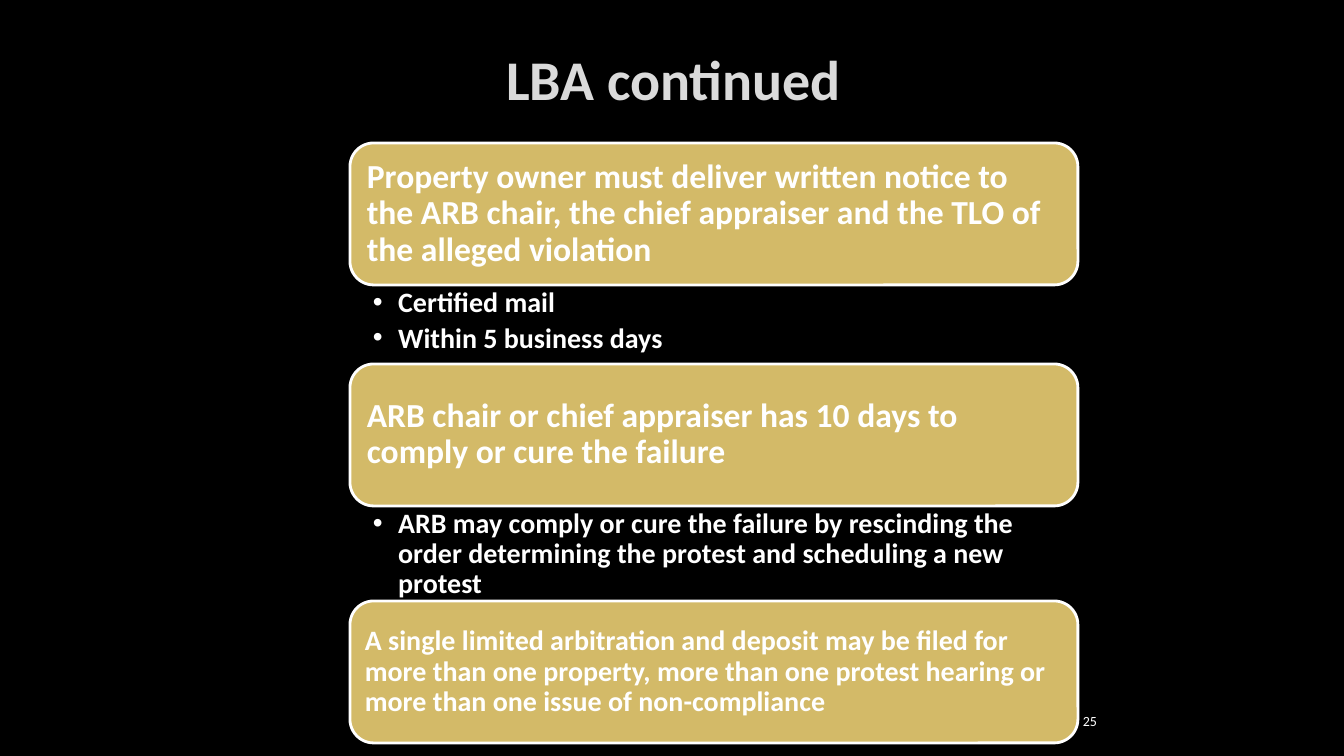
from dataclasses import dataclass

from lxml import etree
from pptx import Presentation, util as u
from pptx.dml.color import RGBColor
from pptx.enum import shapes, text
from pptx.oxml import ns

EMU_PER_PX = 12192000 / 1344
FONT = "Calibri"
COLORS = {
    "background": "000000",
    "title": "DADADA",
    "outline": "404040",
    "box": "D3BA68",
    "text": "FFFFFF",
}
LEFT, TOP, WIDTH, BOX_HEIGHT = 350, 143, 728, 142


@dataclass
class Step:
    heading: str
    size: int
    inset: int
    bullets: tuple[str, ...] = ()
    list_height: int = 0


STEPS = [
    Step(
        "Property owner must deliver written notice to the ARB chair, "
        "the chief appraiser and the TLO of the alleged violation",
        24, 10, ("Certified mail", "Within 5 business days"), 79,
    ),
    Step(
        "ARB chair or chief appraiser has 10 days to comply or cure the failure",
        24, 10,
        ("ARB may comply or cure the failure by rescinding the order "
         "determining the protest and scheduling a new protest",), 95,
    ),
    Step(
        "A single limited arbitration and deposit may be filed for more than one "
        "property, more than one protest hearing or more than one issue of "
        "non-compliance",
        20, 8,
    ),
]


def px(n: int) -> int:
    return u.Emu(round(n * EMU_PER_PX))


def rgb(name: str) -> RGBColor:
    return RGBColor.from_string(COLORS[name])


def place(sp, left: int, top: int, width: int, height: int) -> None:
    sp.left, sp.top, sp.width, sp.height = map(px, (left, top, width, height))


def set_frame(tf, anchor, left: int, top: int, right: int, bottom: int) -> None:
    """Set wrapping, anchor and insets of a text frame."""
    tf.word_wrap = True
    tf.auto_size = text.MSO_AUTO_SIZE.NONE
    tf.vertical_anchor = anchor
    tf.margin_left, tf.margin_top = px(left), px(top)
    tf.margin_right, tf.margin_bottom = px(right), px(bottom)


def add_run(p, words: str, size: int, color: str = "text", bold: bool = True):
    r = p.add_run()
    r.text = words
    r.font.name, r.font.size, r.font.bold = FONT, u.Pt(size), bold
    r.font.color.rgb = rgb(color)
    return r


def outline(r) -> None:
    """Give a run a faint thin outline."""
    ln = etree.Element(ns.qn("a:ln"), w=str(u.Pt(0.75)))
    fill = etree.SubElement(ln, ns.qn("a:solidFill"))
    color = etree.SubElement(fill, ns.qn("a:srgbClr"), val=COLORS["outline"])
    etree.SubElement(color, ns.qn("a:alpha"), val="10000")
    r._r.get_or_add_rPr().insert(0, ln)


def add_bullet(p) -> None:
    pPr = p._p.get_or_add_pPr()
    pPr.set("marL", str(u.Inches(0.25)))
    pPr.set("indent", str(u.Inches(-0.25)))
    etree.SubElement(pPr, ns.qn("a:buFont"), typeface="Arial")
    etree.SubElement(pPr, ns.qn("a:buChar"), char="•")


def add_title(s) -> None:
    sp = s.shapes.title
    place(sp, 216, 29, 915, 150)
    set_frame(sp.text_frame, text.MSO_ANCHOR.BOTTOM, 10, 5, 10, 66)
    p = sp.text_frame.paragraphs[0]
    p.alignment, p.line_spacing = text.PP_ALIGN.CENTER, 0.9
    outline(add_run(p, "LBA continued", 40, "title"))


def add_heading(s, step: Step, top: int) -> None:
    sp = s.shapes.add_shape(
        shapes.MSO_SHAPE.ROUNDED_RECTANGLE,
        *map(px, (LEFT, top, WIDTH, BOX_HEIGHT)),
    )
    sp.shadow.inherit = False
    sp.fill.solid()
    sp.fill.fore_color.rgb = rgb("box")
    sp.line.color.rgb = rgb("text")
    sp.line.width = u.Pt(2)
    set_frame(sp.text_frame, text.MSO_ANCHOR.MIDDLE, *[step.inset] * 4)
    p = sp.text_frame.paragraphs[0]
    p.alignment, p.line_spacing = text.PP_ALIGN.LEFT, 0.9
    add_run(p, step.heading, step.size)


def add_bullet_list(s, step: Step, top: int) -> None:
    sp = s.shapes.add_textbox(*map(px, (LEFT, top, WIDTH, step.list_height)))
    tf = sp.text_frame
    set_frame(tf, text.MSO_ANCHOR.TOP, 23, 3, 16, 3)
    for i, bullet in enumerate(step.bullets):
        p = tf.add_paragraph() if i else tf.paragraphs[0]
        p.line_spacing, p.space_after = 0.9, u.Pt(4)
        add_bullet(p)
        add_run(p, bullet, 20)


def add_page_number(s) -> None:
    sp = s.shapes.add_textbox(*map(px, (880, 701, 227, 40)))
    set_frame(sp.text_frame, text.MSO_ANCHOR.MIDDLE, 10, 5, 10, 5)
    p = sp.text_frame.paragraphs[0]
    p.alignment = text.PP_ALIGN.RIGHT
    add_run(p, "25", 10, bold=False)


def main() -> None:
    prs = Presentation()
    prs.slide_width, prs.slide_height = px(1344), px(756)
    s = prs.slides.add_slide(prs.slide_layouts.get_by_name("Title Only"))
    s.background.fill.solid()
    s.background.fill.fore_color.rgb = rgb("background")

    add_page_number(s)
    add_title(s)
    top = TOP
    for step in STEPS:
        add_heading(s, step, top)
        top += BOX_HEIGHT
        if step.bullets:
            add_bullet_list(s, step, top)
            top += step.list_height
    prs.save("out.pptx")


if __name__ == "__main__":
    main()
